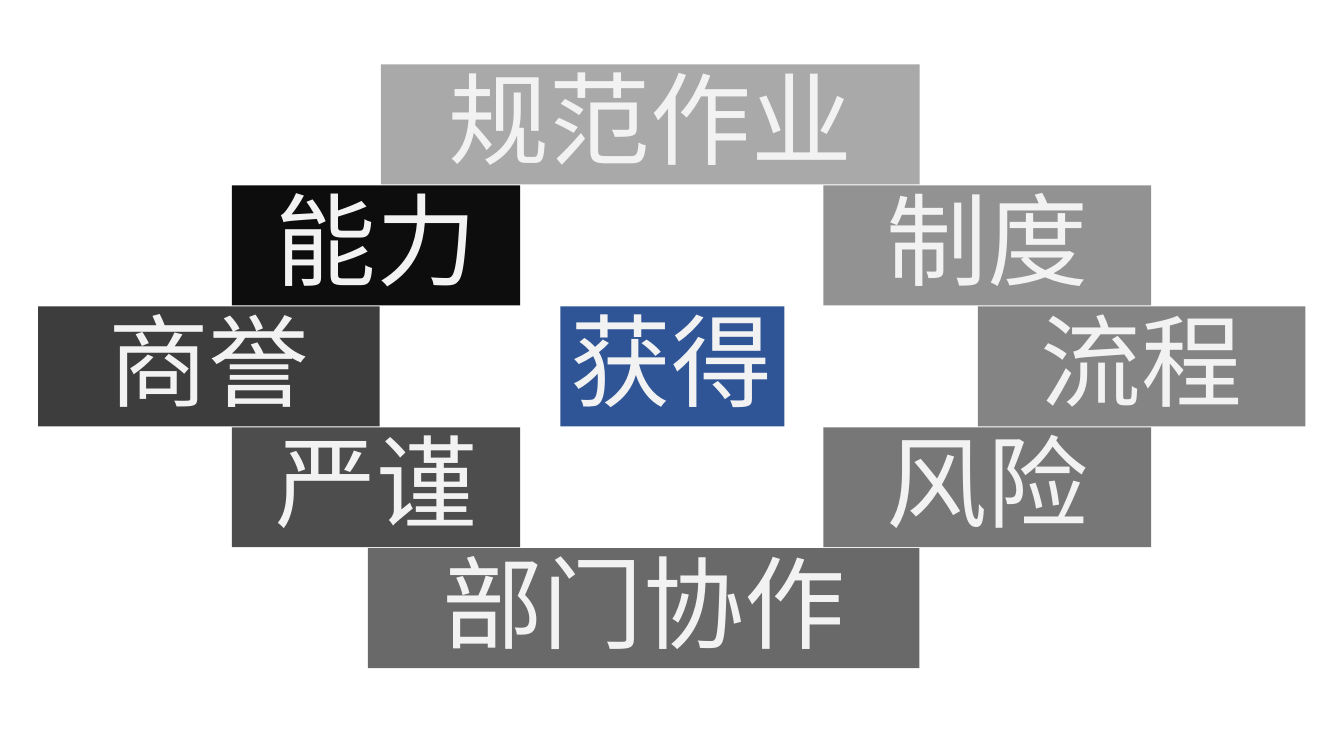
import pptx
import pptx.dml.color
import pptx.enum.shapes
import pptx.enum.text
import pptx.util

Pt = pptx.util.Pt
ALIGN = pptx.enum.text.PP_ALIGN

FIRST_ROW_TOP = 46
ROW_PITCH = 86.4
BLOCK_HEIGHT = 85.7

BLOCKS = [
    ("获得", 2, 400.3, 160, "2F5597", ALIGN.LEFT),
    ("流程", 2, 698.4, 234, "848484", ALIGN.CENTER),
    ("制度", 1, 588.2, 234, "929292", ALIGN.CENTER),
    ("部门协作", 4, 262.8, 394, "696969", ALIGN.CENTER),
    ("严谨", 3, 165.6, 206, "4D4D4D", ALIGN.CENTER),
    ("商誉", 2, 27.2, 244, "3D3D3D", ALIGN.CENTER),
    ("能力", 1, 165.6, 206, "0D0D0D", ALIGN.CENTER),
    ("规范作业", 0, 272, 385, "A9A9A9", ALIGN.CENTER),
    ("风险", 3, 588.2, 234, "777777", ALIGN.CENTER),
]

FRAME_FORMAT = {
    "word_wrap": True,
    "auto_size": pptx.enum.text.MSO_AUTO_SIZE.SHAPE_TO_FIT_TEXT,
    "vertical_anchor": pptx.enum.text.MSO_ANCHOR.BOTTOM,
}
FONT_FORMAT = {"name": "Calibri", "size": Pt(72)}


def color(hex_value):
    return pptx.dml.color.RGBColor.from_string(hex_value)


def apply_format(target, values):
    for name, value in values.items():
        setattr(target, name, value)


def write_text(shape, text, alignment):
    apply_format(shape.text_frame, FRAME_FORMAT)
    paragraph = shape.text_frame.paragraphs[0]
    apply_format(paragraph, {"alignment": alignment, "line_spacing": 0.9})
    run = paragraph.add_run()
    run.text = text
    apply_format(run.font, FONT_FORMAT)
    run.font.color.rgb = color("F2F2F2")


def add_block(slide, text, row, left, width, fill, alignment):
    shape = slide.shapes.add_shape(
        pptx.enum.shapes.MSO_SHAPE.RECTANGLE,
        Pt(left),
        Pt(FIRST_ROW_TOP + row * ROW_PITCH),
        Pt(width),
        Pt(BLOCK_HEIGHT),
    )
    shape.shadow.inherit = False
    shape.fill.solid()
    shape.fill.fore_color.rgb = color(fill)
    shape.line.fill.background()
    write_text(shape, text, alignment)


def main():
    presentation = pptx.Presentation()
    apply_format(presentation, {"slide_width": Pt(960), "slide_height": Pt(540)})
    slide = presentation.slides.add_slide(presentation.slide_layouts[6])
    for block in BLOCKS:
        add_block(slide, *block)
    presentation.save("out.pptx")


if __name__ == "__main__":
    main()
